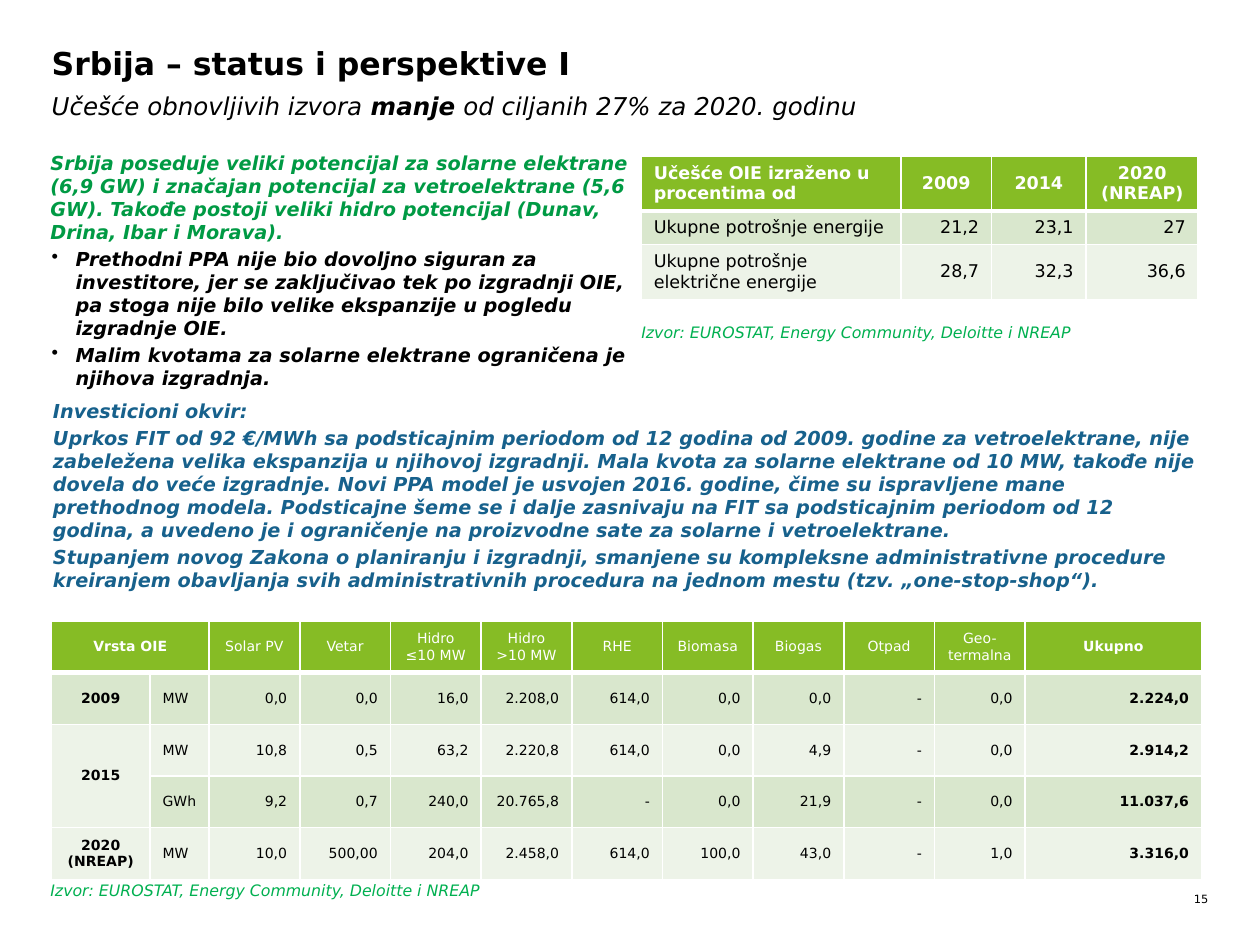
from pptx import Presentation
from pptx.dml.color import RGBColor
from pptx.enum.text import MSO_ANCHOR, PP_ALIGN
from pptx.oxml.ns import qn
from pptx.util import Inches, Pt
from lxml.etree import SubElement

FONT = "DejaVu Sans"
COLORS = {"black": "000000", "white": "FFFFFF", "header": "86BC25",
          "band": "D9E7CD", "light": "EDF3E8", "green": "009A44",
          "source": "00B050", "blue": "17618C"}
LEFT, RIGHT, WIDTH = 0.41, 5.09, 9.11
SOURCE = "Izvor: EUROSTAT, Energy Community, Deloitte i NREAP"

SHARES = [
    ["Učešće OIE izraženo u procentima od", "2009", "2014", "2020 (NREAP)"],
    ["Ukupne potrošnje energije", "21,2", "23,1", "27"],
    ["Ukupne potrošnje električne energije", "28,7", "32,3", "36,6"],
]
CAPACITY = [
    ["Vrsta OIE", "", "Solar PV", "Vetar", "Hidro\n≤10 MW", "Hidro\n>10 MW",
     "RHE", "Biomasa", "Biogas", "Otpad", "Geo-termalna", "Ukupno"],
    ["2009", "MW", "0,0", "0,0", "16,0", "2.208,0", "614,0", "0,0", "0,0",
     "-", "0,0", "2.224,0"],
    ["2015", "MW", "10,8", "0,5", "63,2", "2.220,8", "614,0", "0,0", "4,9",
     "-", "0,0", "2.914,2"],
    ["", "GWh", "9,2", "0,7", "240,0", "20.765,8", "-", "0,0", "21,9",
     "-", "0,0", "11.037,6"],
    ["2020\n(NREAP)", "MW", "10,0", "500,00", "204,0", "2.458,0", "614,0",
     "100,0", "43,0", "-", "1,0", "3.316,0"],
]


def rgb(name):
    return RGBColor.from_string(COLORS[name])


def style(font, size, color="black", bold=False, italic=False):
    font.name, font.size = FONT, Pt(size)
    font.bold, font.italic = bold, italic
    font.color.rgb = rgb(color)


def add_bullet(p, indent=0.19):
    pPr = p._p.get_or_add_pPr()
    pPr.set("marL", str(Inches(indent)))
    pPr.set("indent", str(-Inches(indent)))
    SubElement(pPr, qn("a:buChar")).set("char", "•")


def fill_text(tf, text, gap=2, align=PP_ALIGN.LEFT, bullet=False, **fmt):
    """Write one paragraph per line; text between ** marks is bold."""
    for i, line in enumerate(text.split("\n")):
        p = tf.add_paragraph() if i else tf.paragraphs[0]
        p.alignment = align
        if i:
            p.space_before = Pt(gap)
        if bullet:
            add_bullet(p)
        for j, part in enumerate(line.split("**")):
            r = p.add_run()
            r.text = part
            style(r.font, **{**fmt, "bold": fmt.get("bold", False) or j % 2 == 1})


def set_frame(sp, box):
    sp.left, sp.top, sp.width, sp.height = map(Inches, box)
    tf = sp.text_frame
    tf.word_wrap = True
    tf.vertical_anchor = MSO_ANCHOR.TOP
    tf.margin_left = tf.margin_right = tf.margin_top = tf.margin_bottom = 0
    return tf


def add_text(s, box, text, **fmt):
    fill_text(set_frame(s.shapes.add_textbox(0, 0, 0, 0), box), text, **fmt)


def set_borders(cell, bottom):
    tcPr = cell._tc.get_or_add_tcPr()
    for i, side in enumerate(("lnL", "lnR", "lnT", "lnB")):
        ln = tcPr.makeelement(qn("a:" + side), {
            "w": str(Pt(bottom if side == "lnB" else 1))})
        fill = SubElement(ln, qn("a:solidFill"))
        SubElement(fill, qn("a:srgbClr")).set("val", COLORS["white"])
        tcPr.insert(i, ln)


def add_grid(s, left, top, cols, rows, data, size, cell_format, merges=()):
    """Draw a banded table; cell_format(row, col) gives (align, bold)."""
    frame = s.shapes.add_table(len(rows), len(cols), Inches(left), Inches(top),
                               Inches(sum(cols)), Inches(sum(rows)))
    table = frame.table
    for col, width in zip(table.columns, cols):
        col.width = Inches(width)
    for row, height in zip(table.rows, rows):
        row.height = Inches(height)
    for first, last in merges:
        table.cell(*first).merge(table.cell(*last))
    for i, values in enumerate(data):
        fill = "header" if i == 0 else ("band" if i % 2 else "light")
        for j, value in enumerate(values):
            cell = table.cell(i, j)
            cell.fill.solid()
            cell.fill.fore_color.rgb = rgb(fill)
            set_borders(cell, bottom=1 if i else 3)
            cell.vertical_anchor = MSO_ANCHOR.MIDDLE
            align, bold = cell_format(i, j)
            if cell.is_spanned:
                continue
            fill_text(cell.text_frame, value, gap=0, align=align, size=size,
                      bold=bold, color="black" if i else "white")


def share_format(i, j):
    if j == 0:
        return PP_ALIGN.LEFT, i == 0
    return (PP_ALIGN.RIGHT if i else PP_ALIGN.CENTER), i == 0


def capacity_format(i, j):
    bold = j in (0, len(CAPACITY[0]) - 1)
    if i == 0 or j == 0:
        return PP_ALIGN.CENTER, bold
    return (PP_ALIGN.LEFT if j == 1 else PP_ALIGN.RIGHT), bold


def main():
    prs = Presentation()
    prs.slide_width, prs.slide_height = Inches(10), Inches(7.5)
    s = prs.slides.add_slide(prs.slide_layouts[5])

    # Title and subtitle
    fill_text(set_frame(s.shapes.title, (LEFT, 0.35, WIDTH, 0.4)),
              "Srbija – status i perspektive I", size=18, bold=True)
    add_text(s, (LEFT, 0.72, 6.63, 0.24),
             "Učešće obnovljivih izvora **manje** od ciljanih 27% za 2020. godinu",
             size=14, italic=True)

    # Potential and obstacles
    strong = dict(size=11, bold=True, italic=True)
    add_text(s, (0.4, 1.2, 4.69, 0.74),
             "Srbija poseduje veliki potencijal za solarne elektrane (6,9 GW) i "
             "značajan potencijal za vetroelektrane (5,6 GW). Takođe postoji "
             "veliki hidro potencijal (Dunav, Drina, Ibar i Morava).",
             color="green", **strong)
    add_text(s, (LEFT, 1.96, 4.57, 1.14),
             "Prethodni PPA nije bio dovoljno siguran za investitore, jer se "
             "zaključivao tek po izgradnji OIE, pa stoga nije bilo velike "
             "ekspanzije u pogledu izgradnje OIE.\n"
             "Malim kvotama za solarne elektrane ograničena je njihova izgradnja.",
             bullet=True, **strong)

    # Investment framework
    add_text(s, (0.42, 3.17, WIDTH, 1.54),
             "Investicioni okvir:\n"
             "Uprkos FIT od 92 €/MWh sa podsticajnim periodom od 12 godina od "
             "2009. godine za vetroelektrane, nije zabeležena velika ekspanzija "
             "u njihovoj izgradnji. Mala kvota za solarne elektrane od 10 MW, "
             "takođe nije dovela do veće izgradnje. Novi PPA model je usvojen "
             "2016. godine, čime su ispravljene mane prethodnog modela. "
             "Podsticajne šeme se i dalje zasnivaju na FIT sa podsticajnim "
             "periodom od 12 godina, a uvedeno je i ograničenje na proizvodne "
             "sate za solarne i vetroelektrane.\n"
             "Stupanjem novog Zakona o planiranju i izgradnji, smanjene su "
             "kompleksne administrativne procedure kreiranjem obavljanja svih "
             "administrativnih procedura na jednom mestu (tzv. „one-stop-shop“).",
             color="blue", **strong)

    # Tables
    add_grid(s, RIGHT, 1.24, [2.06, 0.72, 0.75, 0.89], [0.41, 0.26, 0.34],
             SHARES, 10, share_format)
    add_grid(s, LEFT, 4.93, [0.78, 0.47] + [0.72] * 9 + [1.4], [0.41] * 5,
             CAPACITY, 8, capacity_format,
             merges=[((0, 0), (0, 1)), ((2, 0), (3, 0))])

    # Source lines and page number
    for left, top in ((RIGHT, 2.56), (0.4, 6.99)):
        add_text(s, (left, top, 3.67, 0.15), SOURCE, size=9, italic=True,
                 color="source")
    add_text(s, (9.34, 7.08, 0.25, 0.11), "15", size=6.5, align=PP_ALIGN.RIGHT)

    prs.save("out.pptx")


if __name__ == "__main__":
    main()
